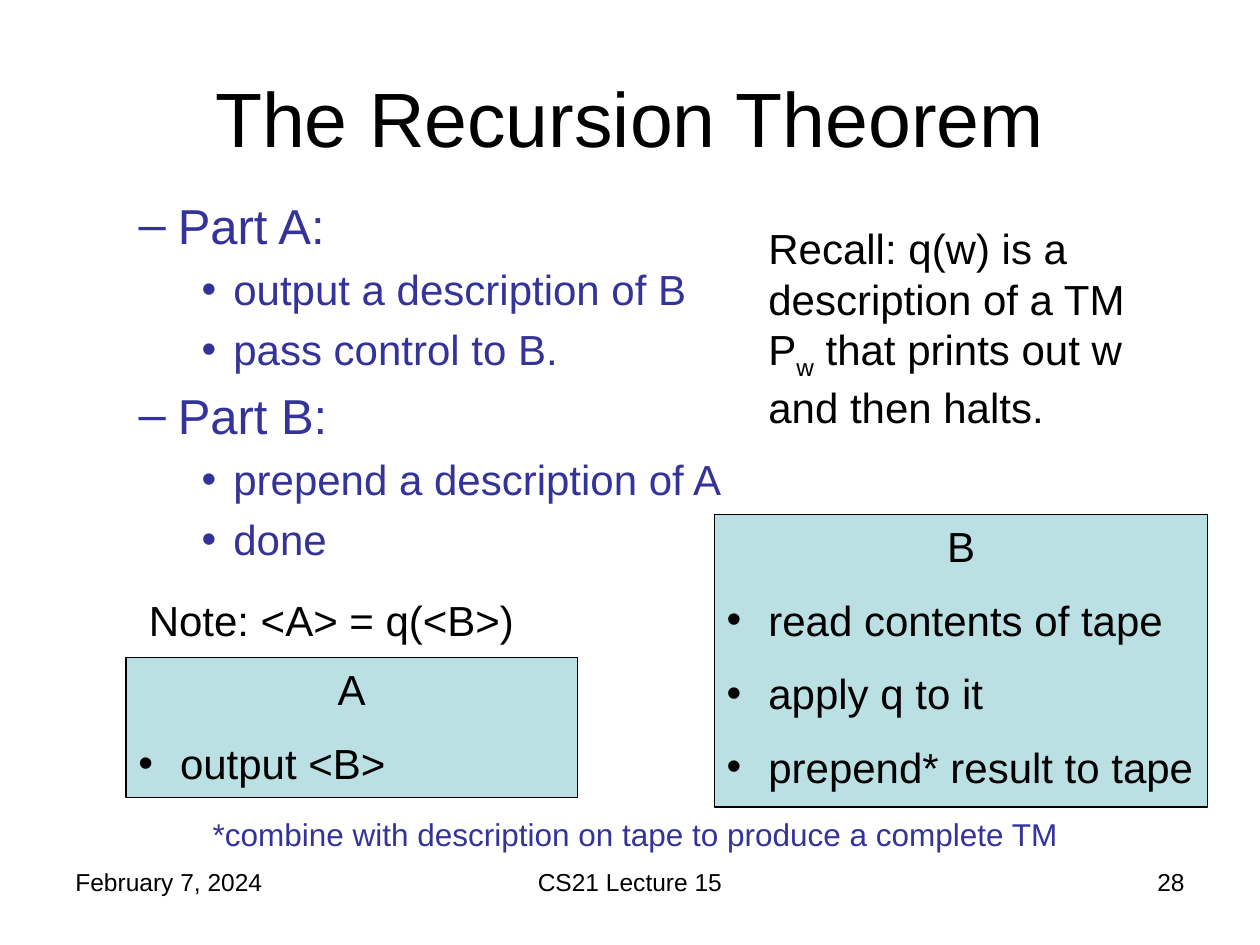
from dataclasses import dataclass
from typing import Optional

import pptx
import pptx.dml.color
import pptx.enum.shapes
import pptx.enum.text
import pptx.oxml.ns
import pptx.util
from lxml import etree

Cm = pptx.util.Cm
Pt = pptx.util.Pt
Align = pptx.enum.text.PP_ALIGN
Anchor = pptx.enum.text.MSO_ANCHOR


@dataclass(frozen=True)
class Theme:
    font: str = "Arial"
    ink: str = "000000"
    accent: str = "333399"
    panel: str = "BBE0E3"
    title: int = 44
    heading: int = 28
    text: int = 24
    remark: int = 18
    footer: int = 14
    tight: float = 0.23
    loose: float = 0.55


THEME = Theme()


@dataclass(frozen=True)
class Place:
    left: float
    top: float
    width: float
    height: float

    def lengths(self) -> tuple:
        return Cm(self.left), Cm(self.top), Cm(self.width), Cm(self.height)


@dataclass(frozen=True)
class Bullet:
    mark: str
    margin: float
    hang: float


@dataclass(frozen=True)
class Style:
    size: int = THEME.text
    color: str = THEME.ink
    align: Align = Align.LEFT
    gap: float = 0
    bullet: Optional[Bullet] = None


@dataclass(frozen=True)
class Machine:
    name: str
    steps: tuple
    place: Place


@dataclass(frozen=True)
class Label:
    text: str
    place: Place
    style: Style


@dataclass(frozen=True)
class Stage:
    name: str
    steps: tuple


STAGE_NAME = Style(THEME.heading, THEME.accent, gap=THEME.tight,
                   bullet=Bullet("–", 2.06, 0.79))
STAGE_STEP = Style(color=THEME.accent, gap=THEME.tight, bullet=Bullet("•", 3.18, 0.64))
MACHINE_NAME = Style(align=Align.CENTER, gap=THEME.loose)
MACHINE_STEP = Style(gap=THEME.loose, bullet=Bullet("•", 0.84, 0.84))
RECALL = Style(gap=THEME.tight)

STAGES = (
    Stage("Part A:", ("output a description of B", "pass control to B.")),
    Stage("Part B:", ("prepend a description of A", "done")),
)
MACHINES = (
    Machine("A", ("output <B>",), Place(2.54, 13.26, 9.1, 2.82)),
    Machine(
        "B",
        ("read contents of tape", "apply q to it", "prepend* result to tape"),
        Place(14.4, 10.37, 9.95, 5.9),
    ),
)
LABELS = (
    Label("February 7, 2024", Place(1.27, 17.35, 5.93, 1.32), Style(THEME.footer)),
    Label("CS21 Lecture 15", Place(8.68, 17.35, 8.04, 1.32),
          Style(THEME.footer, align=Align.CENTER)),
    Label("28", Place(18.2, 17.35, 5.93, 1.32), Style(THEME.footer, align=Align.RIGHT)),
    Label("Note: <A> = q(<B>)", Place(2.75, 11.85, 9.31, 1.28), Style(gap=THEME.loose)),
    Label("*combine with description on tape to produce a complete TM",
          Place(2.96, 16.3, 19.69, 1.02),
          Style(THEME.remark, THEME.accent, Align.CENTER)),
)


def rgb(color: str) -> pptx.dml.color.RGBColor:
    return pptx.dml.color.RGBColor.from_string(color)


def format_paragraph(paragraph, style: Style) -> None:
    paragraph.alignment = style.align
    paragraph.space_before = Pt(round(style.size * style.gap, 1))
    for run in paragraph.runs:
        run.font.name = THEME.font
        run.font.size = Pt(style.size)
        run.font.color.rgb = rgb(style.color)
    if style.bullet:
        properties = paragraph._p.get_or_add_pPr()
        properties.set("marL", str(Cm(style.bullet.margin)))
        properties.set("indent", str(-Cm(style.bullet.hang)))
        face = etree.SubElement(properties, pptx.oxml.ns.qn("a:buFont"))
        face.set("typeface", THEME.font)
        mark = etree.SubElement(properties, pptx.oxml.ns.qn("a:buChar"))
        mark.set("char", style.bullet.mark)


def write_lines(frame, lines: list) -> None:
    frame.word_wrap = True
    frame.text = "\n".join(text for text, _ in lines)
    for paragraph, (_, style) in zip(frame.paragraphs, lines):
        format_paragraph(paragraph, style)


def move(placeholder, place: Place) -> None:
    (placeholder.left, placeholder.top,
     placeholder.width, placeholder.height) = place.lengths()


def fill_title(slide) -> None:
    title = slide.shapes.title
    move(title, Place(1.27, 0.76, 22.86, 3.18))
    write_lines(title.text_frame,
                [("The Recursion Theorem", Style(THEME.title, align=Align.CENTER))])
    title.text_frame.vertical_anchor = Anchor.MIDDLE


def fill_stages(slide) -> None:
    body = slide.placeholders[1]
    move(body, Place(1.27, 3.81, 22.86, 8.05))
    lines = []
    for stage in STAGES:
        lines.append((stage.name, STAGE_NAME))
        lines.extend((step, STAGE_STEP) for step in stage.steps)
    write_lines(body.text_frame, lines)
    body.text_frame.auto_size = pptx.enum.text.MSO_AUTO_SIZE.NONE
    body.text_frame.vertical_anchor = Anchor.TOP
    for paragraph, (_, style) in zip(body.text_frame.paragraphs, lines):
        paragraph.level = 1 if style is STAGE_NAME else 2


def add_machine(slide, machine: Machine) -> None:
    panel = slide.shapes.add_shape(
        pptx.enum.shapes.MSO_SHAPE.RECTANGLE, *machine.place.lengths())
    panel.shadow.inherit = False
    panel.fill.solid()
    panel.fill.fore_color.rgb = rgb(THEME.panel)
    panel.line.color.rgb = rgb(THEME.ink)
    panel.line.width = Pt(0.75)
    steps = [(step, MACHINE_STEP) for step in machine.steps]
    write_lines(panel.text_frame, [(machine.name, MACHINE_NAME)] + steps)
    panel.text_frame.vertical_anchor = Anchor.TOP


def add_label(slide, label: Label) -> None:
    box = slide.shapes.add_textbox(*label.place.lengths())
    write_lines(box.text_frame, [(label.text, label.style)])


def add_recall(slide) -> None:
    box = slide.shapes.add_textbox(*Place(15.24, 4.37, 8.04, 4.32).lengths())
    box.text_frame.word_wrap = True
    recall = box.text_frame.paragraphs[0]
    recall.text = "Recall: q(w) is a description of a TM P"
    subscript = recall.add_run()
    subscript.text = "w"
    subscript._r.get_or_add_rPr().set("baseline", "-25000")
    recall.add_run().text = " that prints out w and then halts."
    format_paragraph(recall, RECALL)


def main() -> None:
    deck = pptx.Presentation()
    deck.slide_width, deck.slide_height = Cm(25.4), Cm(19.05)
    slide = deck.slides.add_slide(deck.slide_layouts[1])
    fill_title(slide)
    fill_stages(slide)
    for machine in MACHINES:
        add_machine(slide, machine)
    add_recall(slide)
    for label in LABELS:
        add_label(slide, label)
    deck.save("out.pptx")


if __name__ == "__main__":
    main()
